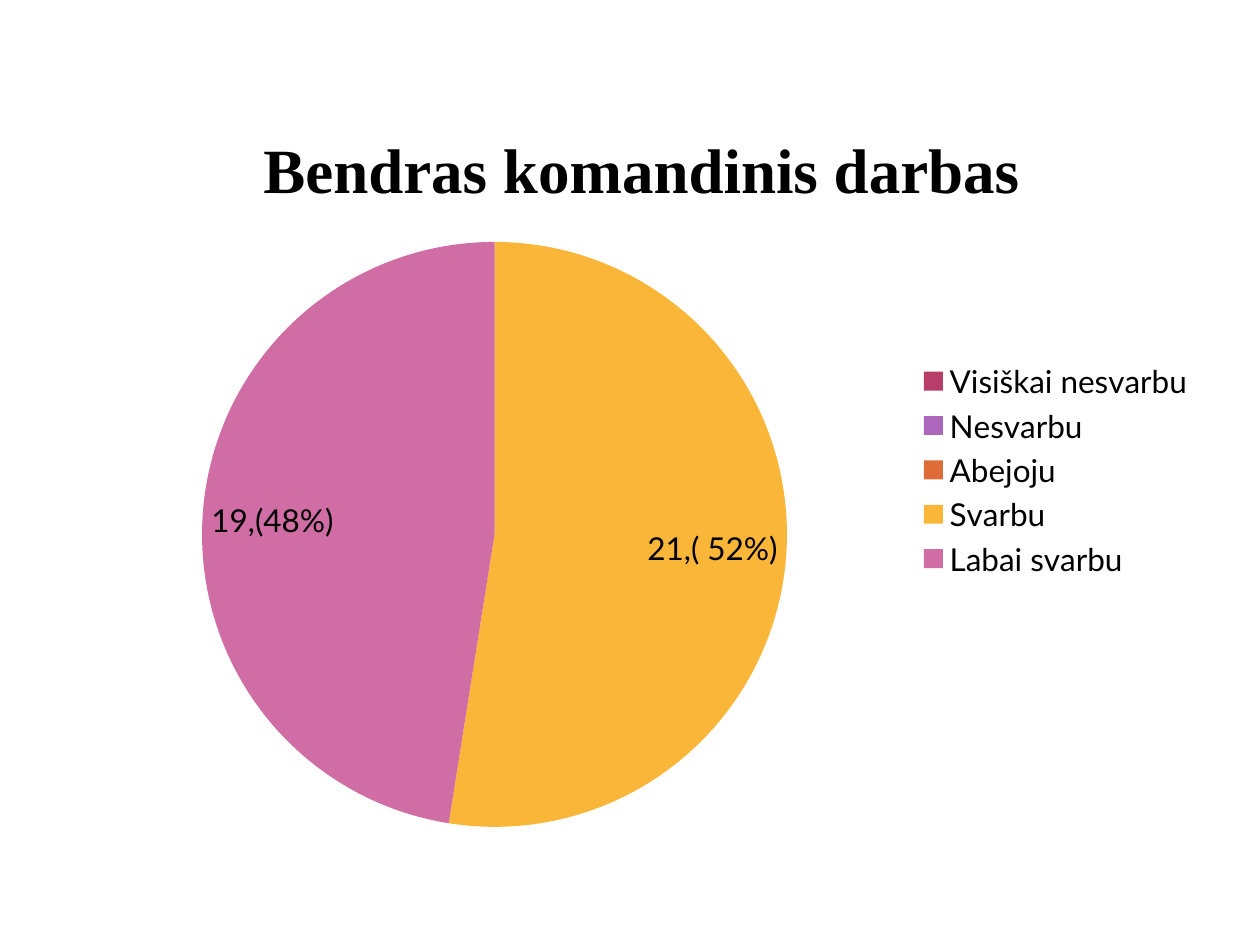
from lxml.etree import SubElement
from pptx import Presentation
from pptx.chart.data import CategoryChartData as Data
from pptx.dml.color import RGBColor
from pptx.enum.chart import XL_CHART_TYPE as Kind, XL_LABEL_POSITION as Spot
from pptx.enum.chart import XL_LEGEND_POSITION as Side
from pptx.oxml import parse_xml
from pptx.oxml.ns import nsdecls, qn
from pptx.util import Pt

SCALE = 914400 // 126
WIDE, HIGH = 1134, 748
TITLE = "Bendras komandinis darbas"
PARTS = [
    ("Visiškai nesvarbu", 0, "B83D68", ""),
    ("Nesvarbu", 0, "AC66BB", ""),
    ("Abejoju", 0, "DE6C36", ""),
    ("Svarbu", 21, "F9B639", "21,( 52%)"),
    ("Labai svarbu", 19, "CF6DA4", "19,(48%)"),
]


def px(n):
    return n * SCALE


def color(code):
    return RGBColor.from_string(code)


def style(font, face, size, bold=False):
    font.name, font.size, font.bold = face, Pt(size), bold
    font.color.rgb = color("000000")


def place(node, spot, **sides):
    for old in node.findall(qn("c:layout")):
        node.remove(old)
    target = '<c:layoutTarget val="inner"/>' if "w" in sides else ""
    modes = "".join(f'<c:{k}Mode val="edge"/>' for k in sides if k in "xy")
    sizes = "".join(f'<c:{k} val="{v / (WIDE if k in "xw" else HIGH):.4f}"/>'
                    for k, v in sides.items())
    node.insert(spot, parse_xml(
        f'<c:layout {nsdecls("c")}><c:manualLayout>{target}{modes}{sizes}'
        "</c:manualLayout></c:layout>"))


def hide(label):
    node = label._get_or_add_dLbl()
    for kid in list(node)[1:]:
        node.remove(kid)
    SubElement(node, qn("c:delete")).set("val", "1")


class Deck:
    """Hold the style and the current slide."""

    face, head = "Lato", "Times New Roman"

    def __init__(self, wide, high):
        self.prs = Presentation()
        self.prs.slide_width, self.prs.slide_height = px(wide), px(high)
        self.slide = self.prs.slides.add_slide(self.prs.slide_layouts[6])

    def pie(self, title, parts, left, top, wide, high):
        data = Data()
        data.categories = [part[0] for part in parts]
        data.add_series(title, [part[1] for part in parts])
        chart = self.slide.shapes.add_chart(
            Kind.PIE, px(left), px(top), px(wide), px(high), data).chart
        style(chart.font, self.face, 18)
        self.title(chart, title)
        chart.has_legend = True
        chart.legend.position = Side.RIGHT
        chart.legend.include_in_layout = False
        style(chart.legend.font, self.face, 18)
        plot = chart.plots[0]
        plot.vary_by_categories = True
        area = chart._chartSpace.chart.plotArea
        place(area, 0, x=128, y=146, w=585, h=585)
        self.slices(plot.series[0], parts)

    def title(self, chart, text):
        chart.has_title = True
        title = chart.chart_title
        title.include_in_layout = False
        run = title.text_frame.paragraphs[0].add_run()
        run.text = text
        style(run.font, self.head, 36, True)
        place(title._element, 1, x=178, y=22)

    def slices(self, series, parts):
        labels = series.data_labels
        labels.show_value = labels.show_percentage = True
        style(labels.font, self.face, 18)
        for i, (_, _, fill, text) in enumerate(parts):
            point = series.points[i]
            point.format.fill.solid()
            point.format.fill.fore_color.rgb = color(fill)
            point.format.line.fill.background()
            label = point.data_label
            if not text:
                hide(label)
                continue
            run = label.text_frame.paragraphs[0].add_run()
            run.text = text
            style(run.font, self.face, 18)
            label.position = Spot.BEST_FIT


def main():
    deck = Deck(1260, 945)
    deck.pie(TITLE, PARTS, 74, 96, WIDE, HIGH)
    deck.prs.save("out.pptx")


if __name__ == "__main__":
    main()
